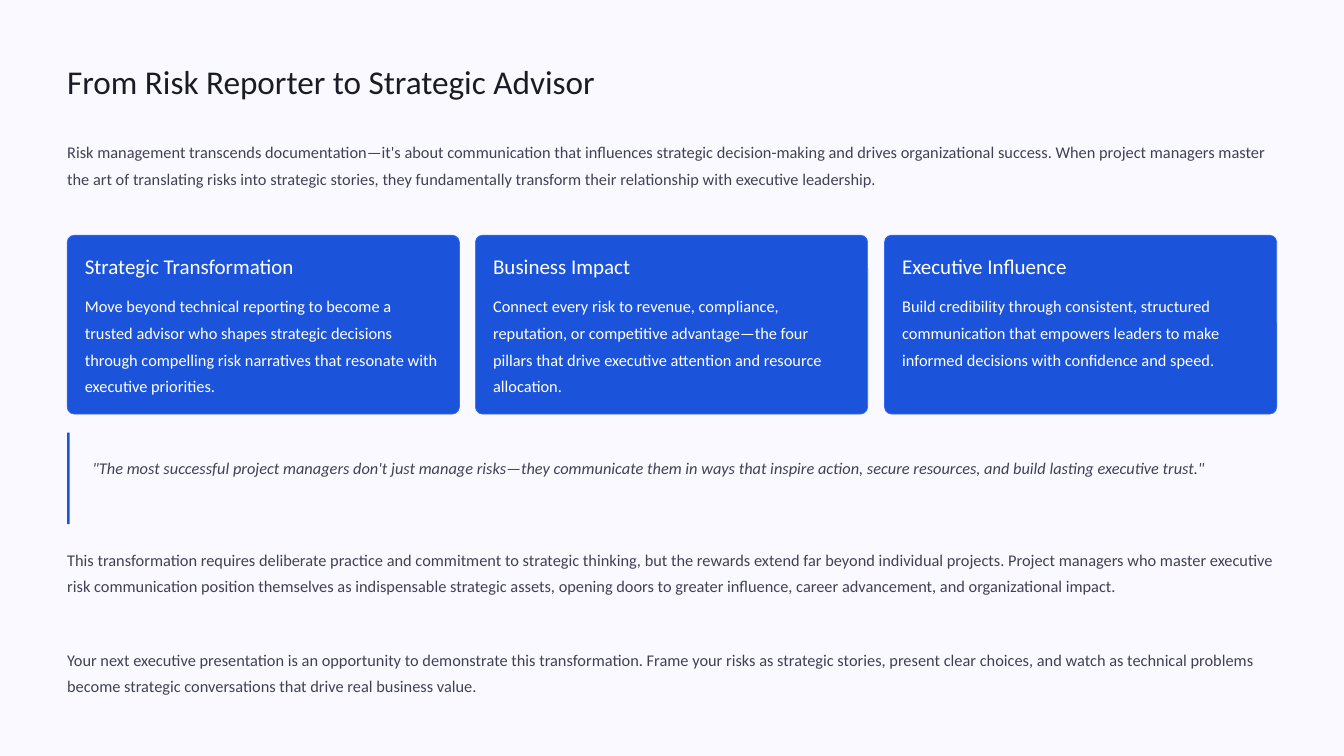
"""Build the slide on moving from risk reporter to strategic advisor."""
from dataclasses import dataclass

from pptx import Presentation
from pptx import util as u
from pptx.dml.color import RGBColor
from pptx.enum import shapes, text
from pptx.shapes.autoshape import Shape
from pptx.slide import Slide

PX = 9144
SLIDE_WIDTH, SLIDE_HEIGHT = 1600, 900
MARGIN = 80
CONTENT_WIDTH = SLIDE_WIDTH - 2 * MARGIN
CARD_TOP, CARD_WIDTH, CARD_HEIGHT, CARD_PADDING = 280, 467, 213, 21


@dataclass(frozen=True)
class TextStyle:
    """Size and line pitch in points, with colour and slant."""
    size: float
    pitch: float
    color: str
    italic: bool = False
    wrap: bool = True


@dataclass(frozen=True)
class Theme:
    """Colours, font and text styles of the slide."""
    font: str = "Calibri"
    background: str = "F9F9FF"
    accent: str = "1B54DA"
    card_edge: str = "346DF3"
    title: TextStyle = TextStyle(28.5, 36, "1B1B27", wrap=False)
    body: TextStyle = TextStyle(14, 23, "404155")
    quote: TextStyle = TextStyle(14, 23, "404155", italic=True)
    card_title: TextStyle = TextStyle(18, 22.5, "FFFFFF", wrap=False)
    card_body: TextStyle = TextStyle(14, 23, "FFFFFF")


@dataclass(frozen=True)
class Box:
    """A rectangle in px."""
    left: int
    top: int
    width: int
    height: int

    def emu(self) -> tuple[u.Emu, ...]:
        """Return the rectangle in EMU."""
        return tuple(u.Emu(n * PX) for n in (self.left, self.top, self.width, self.height))


@dataclass(frozen=True)
class Passage:
    """Words with their place and style."""
    box: Box
    words: str
    style: TextStyle


@dataclass(frozen=True)
class Card:
    """A heading and its explanation."""
    heading: str
    explanation: str


THEME = Theme()

PASSAGES = [
    Passage(Box(MARGIN, 71, 785, 50), "From Risk Reporter to Strategic Advisor", THEME.title),
    Passage(
        Box(MARGIN, 161, CONTENT_WIDTH, 96),
        "Risk management transcends documentation—it's about communication that influences "
        "strategic decision-making and drives organizational success. When project managers "
        "master the art of translating risks into strategic stories, they fundamentally "
        "transform their relationship with executive leadership.",
        THEME.body,
    ),
    Passage(
        Box(110, 537, 1410, 64),
        "\"The most successful project managers don't just manage risks—they communicate them "
        "in ways that inspire action, secure resources, and build lasting executive trust.\"",
        THEME.quote,
    ),
    Passage(
        Box(MARGIN, 646, CONTENT_WIDTH, 96),
        "This transformation requires deliberate practice and commitment to strategic thinking, "
        "but the rewards extend far beyond individual projects. Project managers who master "
        "executive risk communication position themselves as indispensable strategic assets, "
        "opening doors to greater influence, career advancement, and organizational impact.",
        THEME.body,
    ),
    Passage(
        Box(MARGIN, 765, CONTENT_WIDTH, 64),
        "Your next executive presentation is an opportunity to demonstrate this transformation. "
        "Frame your risks as strategic stories, present clear choices, and watch as technical "
        "problems become strategic conversations that drive real business value.",
        THEME.body,
    ),
]

CARDS = [
    Card(
        "Strategic Transformation",
        "Move beyond technical reporting to become a trusted advisor who shapes strategic "
        "decisions through compelling risk narratives that resonate with executive priorities.",
    ),
    Card(
        "Business Impact",
        "Connect every risk to revenue, compliance, reputation, or competitive advantage—the "
        "four pillars that drive executive attention and resource allocation.",
    ),
    Card(
        "Executive Influence",
        "Build credibility through consistent, structured communication that empowers leaders "
        "to make informed decisions with confidence and speed.",
    ),
]


def add_passage(slide: Slide, passage: Passage) -> None:
    """Draw words in a text box without insets."""
    style = passage.style
    frame = slide.shapes.add_textbox(*passage.box.emu()).text_frame
    frame.margin_left = frame.margin_right = frame.margin_top = frame.margin_bottom = 0
    frame.word_wrap = style.wrap
    frame.vertical_anchor = text.MSO_ANCHOR.TOP
    paragraph = frame.paragraphs[0]
    paragraph.text = passage.words
    paragraph.line_spacing = u.Pt(style.pitch)
    font = paragraph.font
    font.name, font.size, font.italic = THEME.font, u.Pt(style.size), style.italic
    font.color.rgb = RGBColor.from_string(style.color)


def add_panel(slide: Slide, preset: shapes.MSO_SHAPE, box: Box) -> Shape:
    """Draw an accent-coloured shape without outline or shadow."""
    panel = slide.shapes.add_shape(preset, *box.emu())
    panel.shadow.inherit = False
    panel.fill.solid()
    panel.fill.fore_color.rgb = RGBColor.from_string(THEME.accent)
    panel.line.fill.background()
    return panel


def add_card(slide: Slide, card: Card, left: int) -> None:
    """Draw a rounded card with its heading and explanation."""
    box = Box(left, CARD_TOP, CARD_WIDTH, CARD_HEIGHT)
    panel = add_panel(slide, shapes.MSO_SHAPE.ROUNDED_RECTANGLE, box)
    panel.adjustments[0] = 0.04
    panel.line.color.rgb = RGBColor.from_string(THEME.card_edge)
    panel.line.width = u.Pt(0.6)
    inner_left, inner_width = left + CARD_PADDING, CARD_WIDTH - 2 * CARD_PADDING
    heading_box = Box(inner_left, CARD_TOP + 20, inner_width, 31)
    explanation_box = Box(inner_left, CARD_TOP + 64, inner_width, 128)
    add_passage(slide, Passage(heading_box, card.heading, THEME.card_title))
    add_passage(slide, Passage(explanation_box, card.explanation, THEME.card_body))


def main() -> None:
    """Build and save the slide."""
    deck = Presentation()
    deck.slide_width, deck.slide_height = u.Emu(SLIDE_WIDTH * PX), u.Emu(SLIDE_HEIGHT * PX)
    slide = deck.slides.add_slide(deck.slide_layouts[6])
    slide.background.fill.solid()
    slide.background.fill.fore_color.rgb = RGBColor.from_string(THEME.background)
    for index, card in enumerate(CARDS):
        offset = index * (CONTENT_WIDTH - CARD_WIDTH) // (len(CARDS) - 1)
        add_card(slide, card, MARGIN + offset)
    add_panel(slide, shapes.MSO_SHAPE.RECTANGLE, Box(MARGIN, 515, 3, 109))
    for passage in PASSAGES:
        add_passage(slide, passage)
    deck.save("out.pptx")


if __name__ == "__main__":
    main()
